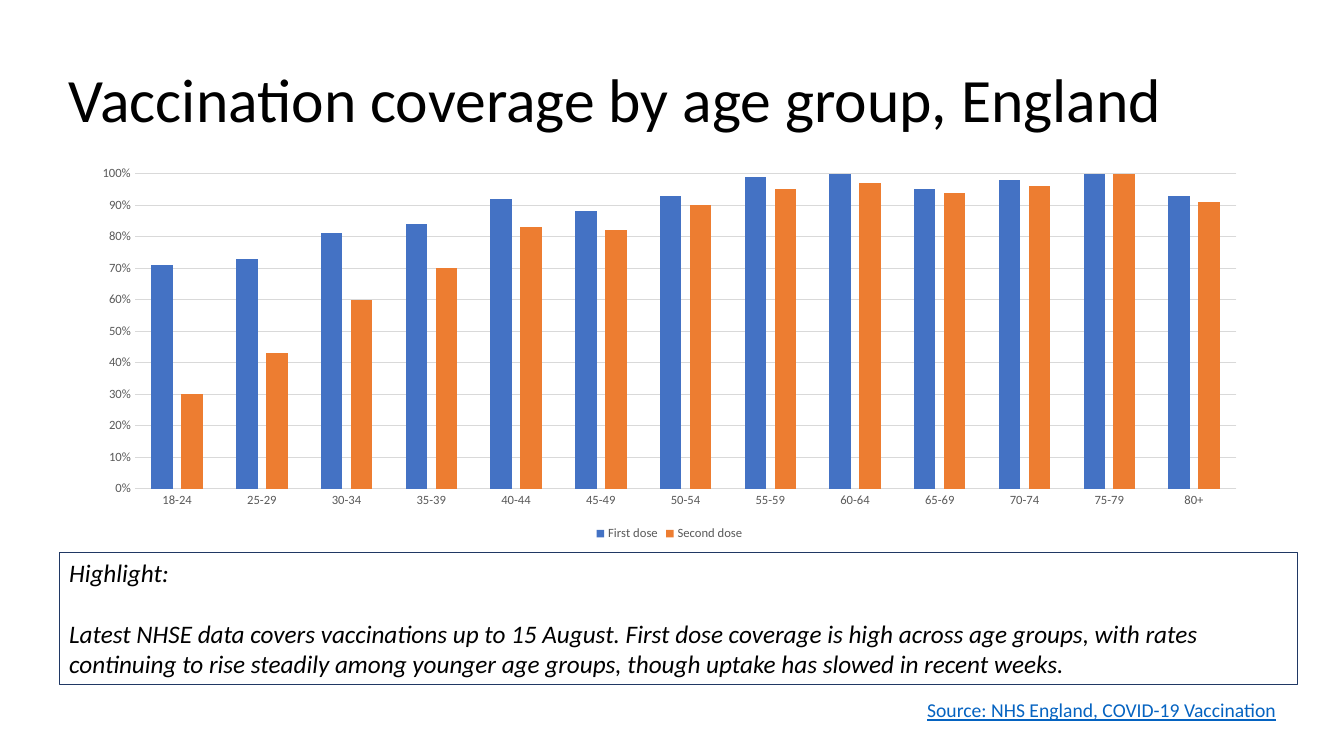
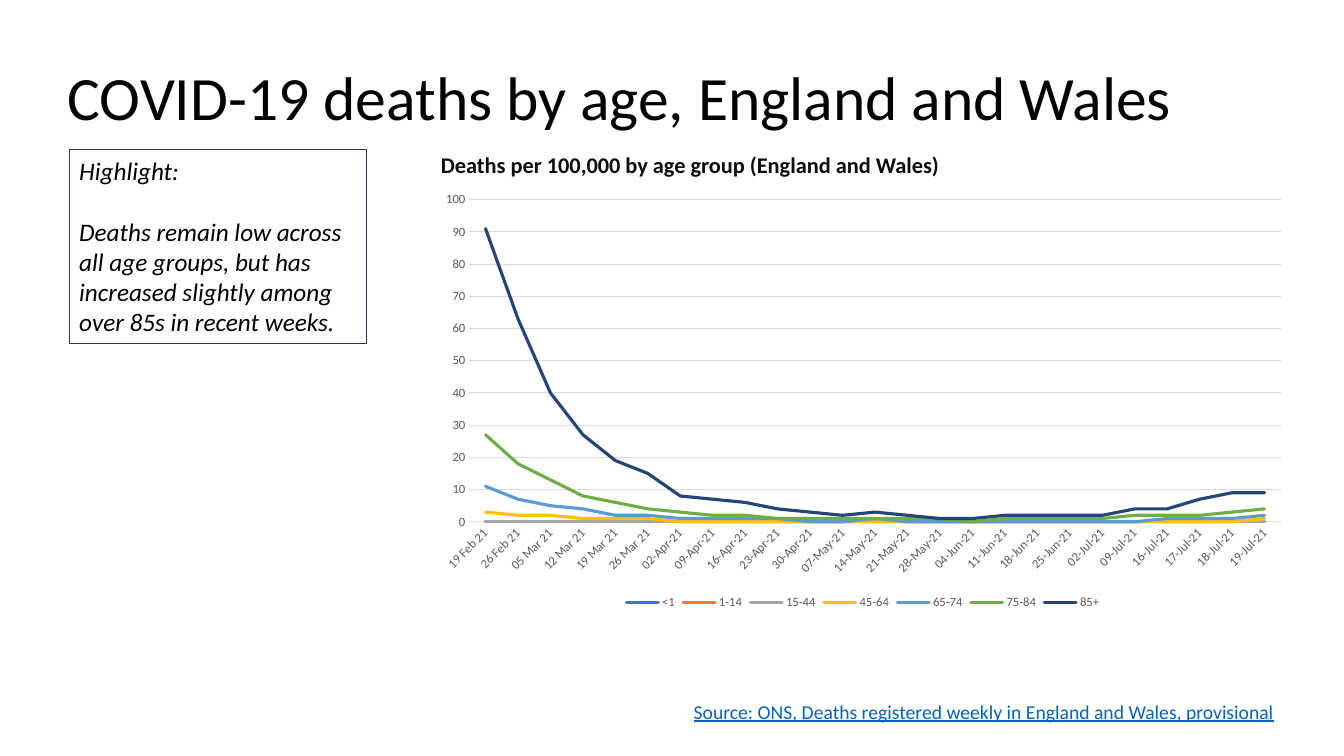
from pptx import Presentation
from pptx.chart.data import CategoryChartData
from pptx.dml.color import RGBColor
from pptx.enum.chart import XL_CHART_TYPE, XL_LEGEND_POSITION, XL_TICK_MARK
from pptx.enum.shapes import MSO_SHAPE
from pptx.enum.text import MSO_ANCHOR, MSO_AUTO_SIZE, PP_ALIGN
from pptx.oxml.ns import qn
from pptx.util import Inches, Pt

COLS, ROWS = 160, 90
TITLE_ONLY = 5


def rgb(value):
    return RGBColor.from_string(value)


class Deck:
    """Shared style, the current slide and one method per kind of element."""

    FONT = "Calibri"
    TEXT, HEADING, LINK = "000000", "0D0D0D", "0563C1"
    BORDER, GRID, LABEL = "203864", "D9D9D9", "595959"
    SERIES = ["4472C4", "ED7D31", "A5A5A5", "FFC000", "5B9BD5", "70AD47", "264478"]

    def __init__(self):
        self.prs = Presentation()
        self.prs.slide_width, self.prs.slide_height = Inches(13.33), Inches(7.5)
        self.s = None

    def area(self, col, row, cols, rows):
        """Turn grid columns and rows into left, top, width and height."""
        dx, dy = self.prs.slide_width / COLS, self.prs.slide_height / ROWS
        return int(col * dx), int(row * dy), int(cols * dx), int(rows * dy)

    def font(self, font, size, color, **flags):
        font.name, font.size, font.color.rgb = self.FONT, Pt(size), rgb(color)
        for flag, value in flags.items():
            setattr(font, flag, value)

    def slide(self, title, col, row):
        self.s = self.prs.slides.add_slide(self.prs.slide_layouts[TITLE_ONLY])
        sp = self.s.shapes.title
        sp.left, sp.top, sp.width, sp.height = self.area(col, row, 138, 17.4)
        tf = sp.text_frame
        tf.text = title
        tf.auto_size, tf.vertical_anchor = MSO_AUTO_SIZE.NONE, MSO_ANCHOR.MIDDLE
        p = tf.paragraphs[0]
        p.alignment, p.line_spacing = PP_ALIGN.LEFT, 0.9
        self.font(p.font, 44, self.TEXT)

    def label(self, text, at, size, color, **flags):
        tf = self.s.shapes.add_textbox(*self.area(*at)).text_frame
        tf.word_wrap = True
        tf.text = text
        p = tf.paragraphs[0]
        p.alignment = PP_ALIGN.LEFT
        self.font(p.font, size, color, **flags)

    def heading(self, text, at):
        self.label(text, at, 16, self.HEADING, bold=True)

    def source(self, text, at):
        self.label(text, at, 14, self.LINK, underline=True)

    def highlight(self, text, at):
        sp = self.s.shapes.add_shape(MSO_SHAPE.RECTANGLE, *self.area(*at))
        sp.shadow.inherit = False
        sp.fill.background()
        sp.line.color.rgb, sp.line.width = rgb(self.BORDER), Pt(0.75)
        tf = sp.text_frame
        tf.word_wrap, tf.vertical_anchor = True, MSO_ANCHOR.TOP
        tf.text = "Highlight:\n" + text
        for p in tf.paragraphs:
            p.alignment = PP_ALIGN.LEFT
            self.font(p.font, 18, self.TEXT, italic=True)
        tf.paragraphs[1].space_before = Pt(22)

    def chart(self, kind, categories, series, at, number_format="General"):
        data = CategoryChartData(number_format=number_format)
        data.categories = categories
        for name, values in series.items():
            data.add_series(name, values)
        chart = self.s.shapes.add_chart(kind, *self.area(*at), data).chart
        self.font(chart.font, 10, self.TEXT)
        chart.has_title = False
        chart.has_legend = True
        chart.legend.position = XL_LEGEND_POSITION.BOTTOM
        chart.legend.include_in_layout = False
        self.font(chart.legend.font, 9, self.LABEL)

        # Axes and gridlines
        cat, val = chart.category_axis, chart.value_axis
        for axis in (cat, val):
            axis.major_tick_mark = axis.minor_tick_mark = XL_TICK_MARK.NONE
            self.font(axis.tick_labels.font, 9, self.LABEL)
        val.tick_labels.number_format = number_format
        val.tick_labels.number_format_is_linked = False
        val.format.line.fill.background()
        val.minimum_scale = 0
        for line in (cat.format.line, val.major_gridlines.format.line):
            line.color.rgb, line.width = rgb(self.GRID), Pt(0.75)
        chart.plots[0].vary_by_categories = False
        return chart

    def columns(self, categories, series, at):
        chart = self.chart(XL_CHART_TYPE.COLUMN_CLUSTERED, categories, series, at, "0%")
        chart.value_axis.maximum_scale, chart.value_axis.major_unit = 1, 0.1
        plot = chart.plots[0]
        plot.gap_width, plot.overlap = 156, -40
        for ser, color in zip(plot.series, self.SERIES):
            ser.format.fill.solid()
            ser.format.fill.fore_color.rgb = rgb(color)

    def lines(self, categories, series, at):
        chart = self.chart(XL_CHART_TYPE.LINE, categories, series, at)
        # Automatic slant of the date labels
        body = chart.category_axis._element.find(qn("c:txPr")).find(qn("a:bodyPr"))
        body.set("rot", "-60000000")
        for ser, color in zip(chart.plots[0].series, self.SERIES):
            ser.smooth = False
            ser.format.line.color.rgb, ser.format.line.width = rgb(color), Pt(2.25)
            # Round line ends
            ser._element.find(qn("c:spPr")).find(qn("a:ln")).set("cap", "rnd")


AGE_GROUPS = ["18-24", "25-29", "30-34", "35-39", "40-44", "45-49", "50-54",
              "55-59", "60-64", "65-69", "70-74", "75-79", "80+"]
COVERAGE = {
    "First dose": [0.71, 0.73, 0.81, 0.84, 0.92, 0.88, 0.93,
                   0.99, 1, 0.95, 0.98, 1.02, 0.93],
    "Second dose": [0.3, 0.43, 0.6, 0.7, 0.83, 0.82, 0.9,
                    0.95, 0.97, 0.94, 0.96, 1.01, 0.91],
}
WEEKS = ["19 Feb 21", "26 Feb 21", "05 Mar 21", "12 Mar 21", "19 Mar 21",
         "26 Mar 21", "02-Apr-21", "09-Apr-21", "16-Apr-21", "23-Apr-21",
         "30-Apr-21", "07-May-21", "14-May-21", "21-May-21", "28-May-21",
         "04-Jun-21", "11-Jun-21", "18-Jun-21", "25-Jun-21", "02-Jul-21",
         "09-Jul-21", "16-Jul-21", "17-Jul-21", "18-Jul-21", "19-Jul-21"]
NO_DEATHS = [0] * len(WEEKS)
DEATHS = {
    "<1": NO_DEATHS,
    "1-14": NO_DEATHS,
    "15-44": NO_DEATHS,
    "45-64": [3, 2, 2, 1, 1, 1] + [0] * 18 + [1],
    "65-74": [11, 7, 5, 4, 2, 2, 1, 1, 1, 1, 0, 0, 1,
              0, 0, 0, 0, 0, 0, 0, 0, 1, 1, 1, 2],
    "75-84": [27, 18, 13, 8, 6, 4, 3, 2, 2, 1, 1, 1, 1,
              1, 1, 0, 1, 1, 1, 1, 2, 2, 2, 3, 4],
    "85+": [91, 63, 40, 27, 19, 15, 8, 7, 6, 4, 3, 2, 3,
            2, 1, 1, 2, 2, 2, 2, 4, 4, 7, 9, 9],
}


def main():
    deck = Deck()

    # Vaccination coverage
    deck.slide("Vaccination coverage by age group, England", 7, 3.5)
    deck.columns(AGE_GROUPS, COVERAGE, (9.4, 18.88, 140.6, 46))
    deck.highlight(
        "Latest NHSE data covers vaccinations up to 15 August. First dose coverage is "
        "high across age groups, with rates continuing to rise steadily among younger "
        "age groups, though uptake has slowed in recent weeks.",
        (7.05, 65.75, 147.4, 15.8))
    deck.source("Source: NHS England, COVID-19 Vaccination", (109.2, 82.55, 44.8, 4.1))

    # Deaths by age
    deck.slide("COVID-19 deaths by age, England and Wales", 6.85, 3.3)
    deck.highlight(
        "Deaths remain low across all age groups, but has increased slightly among "
        "over 85s in recent weeks.",
        (8.25, 17.85, 35.4, 23))
    deck.heading("Deaths per 100,000 by age group (England and Wales)",
                 (51.3, 17.4, 64, 4.4))
    deck.lines(WEEKS, DEATHS, (50.9, 21.87, 103.65, 51.25))
    deck.source("Source: ONS, Deaths registered weekly in England and Wales, provisional",
                (81.4, 82.7, 72.2, 4.1))

    deck.prs.save("out.pptx")


if __name__ == "__main__":
    main()
